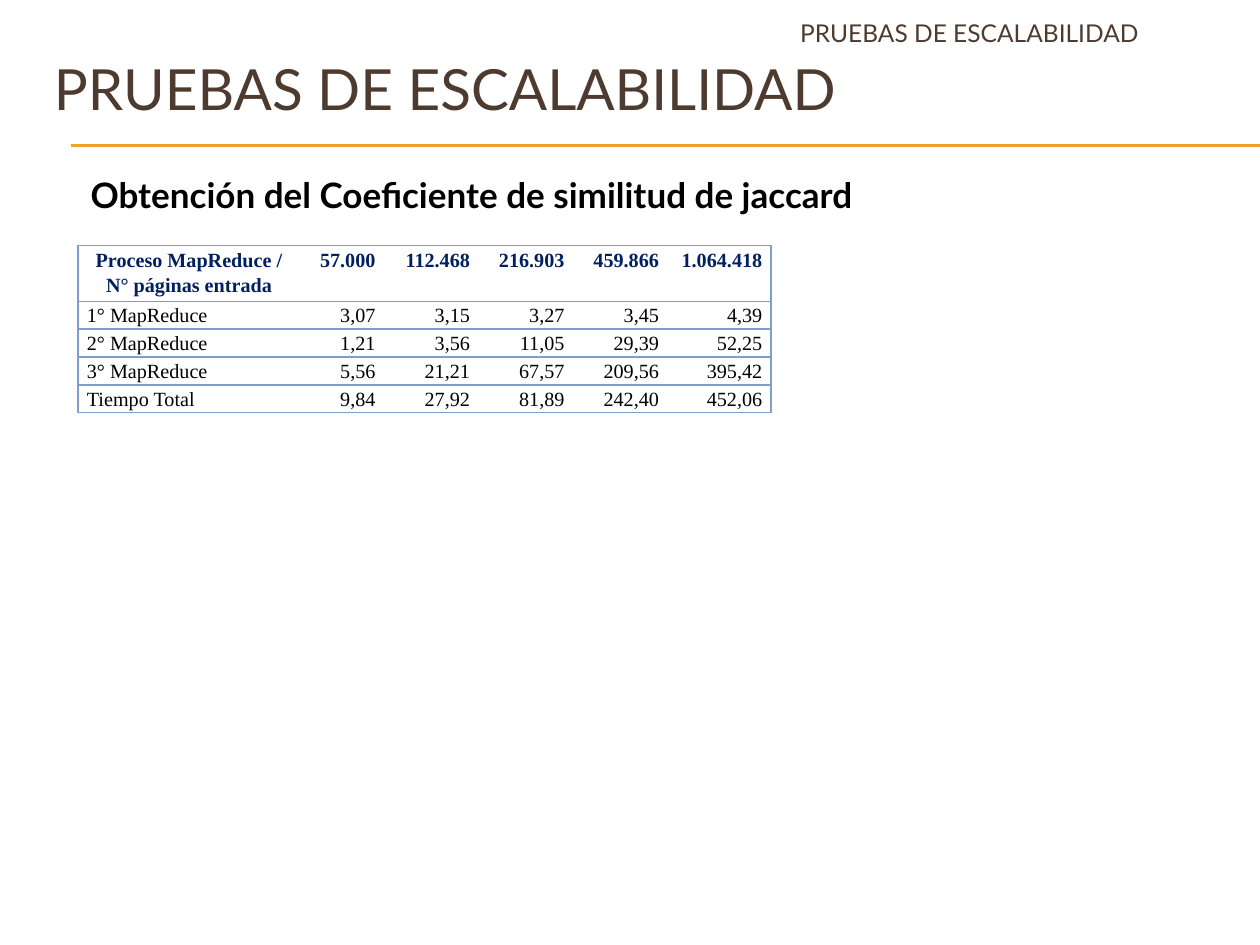
from lxml import etree
from pptx import Presentation, util as u
from pptx.dml.color import RGBColor
from pptx.enum import shapes, text
from pptx.oxml import ns

BROWN = RGBColor(0x4E, 0x3B, 0x30)
GOLD = RGBColor(0xF0, 0xA2, 0x2E)
NAVY = RGBColor(0x00, 0x20, 0x60)
BLUE = RGBColor(0x7B, 0xA0, 0xCD)
BLACK = RGBColor(0, 0, 0)
WHITE = RGBColor(255, 255, 255)
NO_GRID = "{2D5ABB26-0587-4C30-8999-92F81FD0307C}"
WIDE, HIGH = 10, 7.5

TOPIC = "PRUEBAS DE ESCALABILIDAD"
HEAD = "Obtención del Coeficiente de similitud de jaccard"
ROWS = [
    ["Proceso MapReduce /\vN° páginas entrada",
     "57.000", "112.468", "216.903", "459.866", "1.064.418"],
    ["1° MapReduce", "3,07", "3,15", "3,27", "3,45", "4,39"],
    ["2° MapReduce", "1,21", "3,56", "11,05", "29,39", "52,25"],
    ["3° MapReduce", "5,56", "21,21", "67,57", "209,56", "395,42"],
    ["Tiempo Total", "9,84", "27,92", "81,89", "242,40", "452,06"],
]
COLS = [1.76, 0.67, 0.75, 0.75, 0.75, 0.82]
LINE = 0.21


def style(par, face, size, color, bold=False):
    for run in par.runs:
        font = run.font
        font.name, font.size, font.bold = face, u.Pt(size), bold
        font.color.rgb = color


def add_label(slide, box, words, size, color, bold=False,
              inset=(0.1, 0.05, 0.1, 0.05), anchor=text.MSO_ANCHOR.MIDDLE):
    frame = slide.shapes.add_textbox(*map(u.Inches, box)).text_frame
    frame.word_wrap = True
    frame.vertical_anchor = anchor
    (frame.margin_left, frame.margin_top,
     frame.margin_right, frame.margin_bottom) = map(u.Inches, inset)
    frame.text = words
    style(frame.paragraphs[0], "Lato", size, color, bold)


def add_rule(slide, left, top):
    """Gold rule running to the right edge of the slide."""
    rule = slide.shapes.add_connector(
        shapes.MSO_CONNECTOR.STRAIGHT,
        *map(u.Inches, (left, top, WIDE, top)))
    rule.line.color.rgb = GOLD
    rule.line.width = u.Pt(0.75)
    etree.SubElement(rule.line._get_or_add_ln().getparent(),
                     ns.qn("a:effectLst"))


def add_edge(cell, side):
    props = cell._tc.get_or_add_tcPr()
    edge = etree.SubElement(props, ns.qn("a:ln" + side), w=str(u.Pt(1)))
    fill = etree.SubElement(edge, ns.qn("a:solidFill"))
    etree.SubElement(fill, ns.qn("a:srgbClr"), val=str(BLUE))


def fill_cell(cell, words, row, col):
    # Rows are ruled across; only the outer columns have side edges
    sides = "L" * (col == 0) + "R" * (col == len(COLS) - 1) + "TB"
    for side in sides:
        add_edge(cell, side)
    cell.fill.solid()
    cell.fill.fore_color.rgb = WHITE
    cell.margin_left = cell.margin_right = u.Inches(0.07)
    cell.margin_top = cell.margin_bottom = 0
    cell.text_frame.text = words
    par = cell.text_frame.paragraphs[0]
    par.line_spacing = 1.15
    if col:
        par.alignment = text.PP_ALIGN.RIGHT
    else:
        par.alignment = text.PP_ALIGN.LEFT if row else text.PP_ALIGN.CENTER
    style(par, "Times New Roman", 11.5, BLACK if row else NAVY, row == 0)


def add_times(slide, left, top):
    """Table of run times per process and input size."""
    tall = [2 * LINE] + [LINE] * (len(ROWS) - 1)
    box = map(u.Inches, (left, top, sum(COLS), sum(tall)))
    table = slide.shapes.add_table(len(ROWS), len(COLS), *box).table
    table.first_row = table.horz_banding = False
    table._tbl.tblPr.find(ns.qn("a:tableStyleId")).text = NO_GRID
    for col, wide in zip(table.columns, COLS):
        col.width = u.Inches(wide)
    for r, words in enumerate(ROWS):
        table.rows[r].height = u.Inches(tall[r])
        for c, word in enumerate(words):
            fill_cell(table.cell(r, c), word, r, c)


def main():
    deck = Presentation()
    deck.slide_width, deck.slide_height = u.Inches(WIDE), u.Inches(HIGH)
    slide = deck.slides.add_slide(deck.slide_layouts[6])

    # Double rule under the title
    for top in (1.15, 1.16):
        add_rule(slide, 0.56, top)

    # Title, raised within its box by the bottom inset
    add_label(slide, (0.33, 0.5, 9.5, 0.92), TOPIC, 32.4, BROWN,
              inset=(0.1, 0, 0.1, 0.52))

    # Results
    add_times(slide, 0.62, 1.95)

    # Running head and subtitle
    add_label(slide, (WIDE * 0.525, 0, WIDE * 0.475, 0.52), TOPIC, 14, BROWN,
              inset=(1.1, 0.05, 0.1, 0.05))
    add_label(slide, (0.62, 1.33, 7.19, 0.44), HEAD, 20, BLACK, True,
              anchor=text.MSO_ANCHOR.TOP)
    deck.save("out.pptx")


if __name__ == "__main__":
    main()
